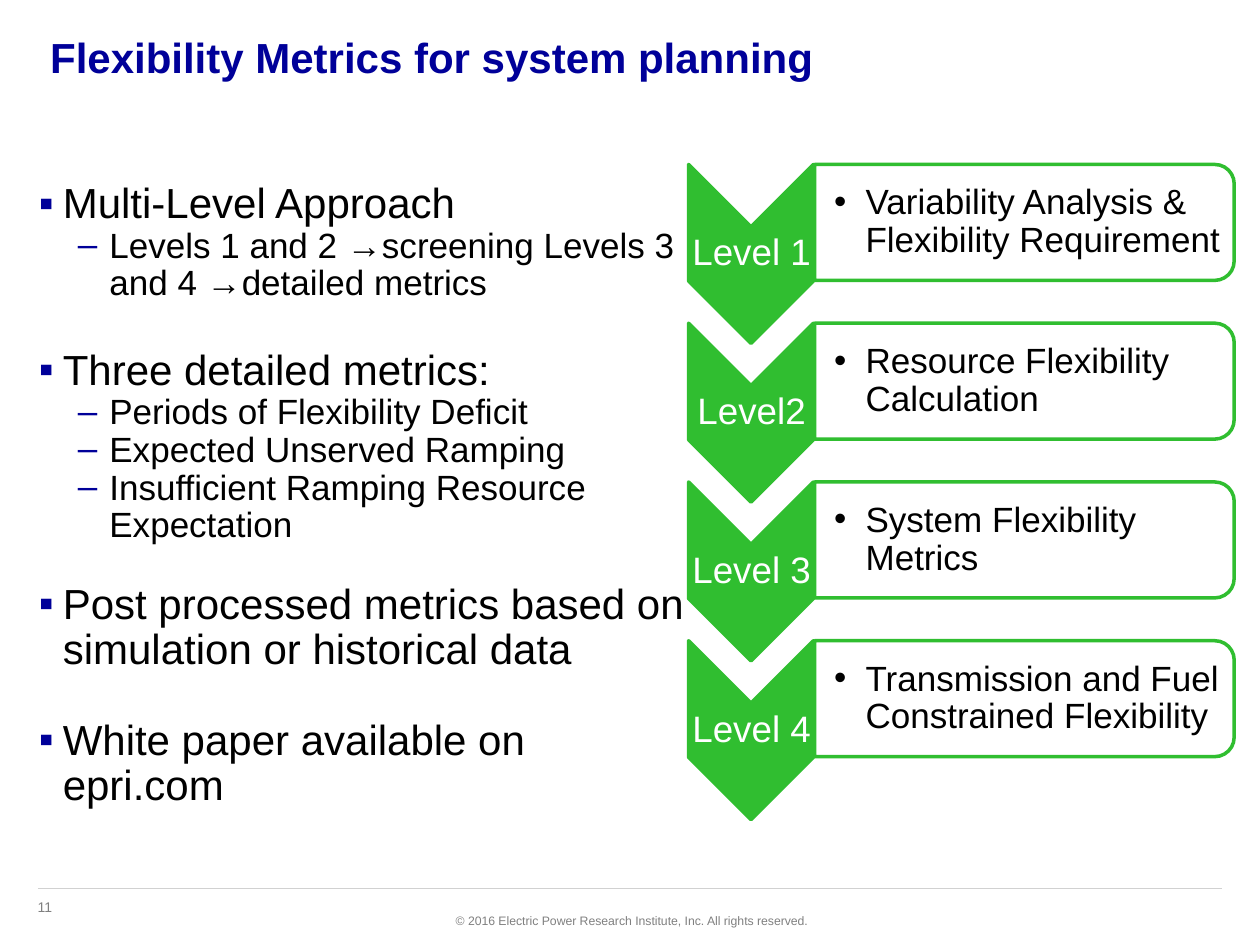
from dataclasses import dataclass

from lxml.etree import SubElement
from pptx import Presentation
from pptx.dml.color import RGBColor
from pptx.enum.shapes import MSO_CONNECTOR, MSO_SHAPE
from pptx.enum.text import MSO_ANCHOR, PP_ALIGN
from pptx.oxml.ns import qn
from pptx.util import Inches, Pt

TITLE = "Flexibility Metrics for system planning"
PAGE_NUMBER = "11"
COPYRIGHT = "© 2016 Electric Power Research Institute, Inc. All rights reserved."
OUTLINE = [
    (0, 0, "Multi-Level Approach"),
    (1, 0, "Levels 1 and 2 →screening Levels 3 and 4 →detailed metrics"),
    (0, 26, "Three detailed metrics:"),
    (1, 0, "Periods of Flexibility Deficit"),
    (1, 0, "Expected Unserved Ramping"),
    (1, 0, "Insufficient Ramping Resource Expectation"),
    (0, 21.5, "Post processed metrics based on simulation or historical data"),
    (0, 26, "White paper available on epri.com"),
]
LEVELS = [
    ("Level 1", "Variability Analysis & Flexibility Requirement"),
    ("Level2", "Resource Flexibility Calculation"),
    ("Level 3", "System Flexibility Metrics"),
    ("Level 4", "Transmission and Fuel Constrained Flexibility"),
]
OUTLINE_STYLES = [("▪", 0.19, 0.19), ("–", 0.56, 0.25)]
LEVEL_PITCH = 1.26


@dataclass(frozen=True)
class Theme:
    """Colours and type sizes of the slide."""

    font: str = "Arial"
    navy: str = "000099"
    green: str = "30BE30"
    black: str = "000000"
    white: str = "FFFFFF"
    grey: str = "808080"
    rule: str = "D1D1D1"
    heading: float = 24
    detail: float = 20
    level: float = 21
    page: float = 8
    legal: float = 7


THEME = Theme()


def add_frame(slide, box, insets=(0.1, 0.05, 0.1, 0.05), anchor=MSO_ANCHOR.TOP, wrap=True):
    """Add a text box and return its text frame."""
    frame = slide.shapes.add_textbox(*map(Inches, box)).text_frame
    frame.word_wrap = wrap
    frame.vertical_anchor = anchor
    frame.margin_left, frame.margin_top, frame.margin_right, frame.margin_bottom = map(Inches, insets)
    return frame


def write(paragraph, words, size, color, bold=False, align=PP_ALIGN.LEFT, spacing=None):
    """Add one formatted run to a paragraph."""
    paragraph.alignment = align
    if spacing:
        paragraph.line_spacing = spacing
    run = paragraph.add_run()
    run.text = words
    run.font.name = THEME.font
    run.font.size = Pt(size)
    run.font.bold = bold
    run.font.color.rgb = RGBColor.from_string(color)


def add_bullet(paragraph, mark, color, margin, hanging):
    """Give a paragraph a coloured bullet and a hanging indent."""
    properties = paragraph._p.get_or_add_pPr()
    properties.set("marL", str(Inches(margin)))
    properties.set("indent", str(-Inches(hanging)))
    bullet_color = SubElement(properties, qn("a:buClr"))
    SubElement(bullet_color, qn("a:srgbClr"), val=color)
    SubElement(properties, qn("a:buFont"), typeface=THEME.font)
    SubElement(properties, qn("a:buChar"), char=mark)


def add_turned_shape(slide, preset, box, fill):
    """Add a green-edged preset shape turned a quarter clockwise."""
    shape = slide.shapes.add_shape(preset, *map(Inches, box))
    shape.rotation = 90
    shape.shadow.inherit = False
    shape.fill.solid()
    shape.fill.fore_color.rgb = RGBColor.from_string(fill)
    shape.line.color.rgb = RGBColor.from_string(THEME.green)
    shape.line.width = Pt(2)
    return shape


def add_footer(slide):
    """Draw the page number, rule and copyright line."""
    write(add_frame(slide, (0.2, 7.08, 0.66, 0.24)).paragraphs[0], PAGE_NUMBER, THEME.page, THEME.grey)
    rule = slide.shapes.add_connector(
        MSO_CONNECTOR.STRAIGHT, Inches(0.3), Inches(7.05), Inches(9.7), Inches(7.05)
    )
    rule.line.color.rgb = RGBColor.from_string(THEME.rule)
    rule.line.width = Pt(0.75)
    SubElement(rule._element.spPr, qn("a:effectLst"))
    legal = add_frame(slide, (3.49, 7.2, 3.02, 0.22), wrap=False)
    write(legal.paragraphs[0], COPYRIGHT, THEME.legal, THEME.grey, align=PP_ALIGN.RIGHT)


def add_outline(slide):
    """Write the two-level bullet list."""
    frame = add_frame(slide, (0.21, 1.4, 5.35, 5.5))
    for index, (depth, gap, words) in enumerate(OUTLINE):
        paragraph = frame.add_paragraph() if index else frame.paragraphs[0]
        paragraph.level = depth
        mark, margin, hanging = OUTLINE_STYLES[depth]
        add_bullet(paragraph, mark, THEME.navy, margin, hanging)
        if gap:
            paragraph.space_before = Pt(gap)
        size = THEME.detail if depth else THEME.heading
        write(paragraph, words, size, THEME.black, spacing=0.9)


def add_level(slide, offset, label, description):
    """Draw one chevron with its label and description panel."""
    add_turned_shape(slide, MSO_SHAPE.CHEVRON, (5.25, 1.52 + offset, 1.42, 0.99), THEME.green)
    label_frame = add_frame(slide, (5.47, 1.8 + offset, 0.99, 0.43), (0.01,) * 4, MSO_ANCHOR.MIDDLE)
    write(label_frame.paragraphs[0], label, THEME.level, THEME.white, align=PP_ALIGN.CENTER, spacing=0.9)
    panel = add_turned_shape(
        slide, MSO_SHAPE.ROUND_2_SAME_RECTANGLE, (7.67, 0.1 + offset, 0.92, 3.33), THEME.white
    )
    panel_color = panel._element.spPr.find(qn("a:solidFill")).find(qn("a:srgbClr"))
    SubElement(panel_color, qn("a:alpha"), val="90000")
    detail_frame = add_frame(
        slide, (6.46, 1.35 + offset, 3.29, 0.83), (0.16, 0.01, 0.01, 0.01), MSO_ANCHOR.MIDDLE
    )
    detail = detail_frame.paragraphs[0]
    add_bullet(detail, "•", THEME.black, 0.25, 0.25)
    write(detail, description, THEME.detail, THEME.black, spacing=0.9)


def main():
    """Build and save the slide."""
    deck = Presentation()
    deck.slide_width, deck.slide_height = Inches(10), Inches(7.5)
    slide = deck.slides.add_slide(deck.slide_layouts[6])
    add_footer(slide)
    title = add_frame(slide, (0.3, 0.2, 9.4, 0.8))
    write(title.paragraphs[0], TITLE, THEME.heading, THEME.navy, bold=True)
    add_outline(slide)
    for index, (label, description) in enumerate(LEVELS):
        add_level(slide, index * LEVEL_PITCH, label, description)
    deck.save("out.pptx")


if __name__ == "__main__":
    main()
